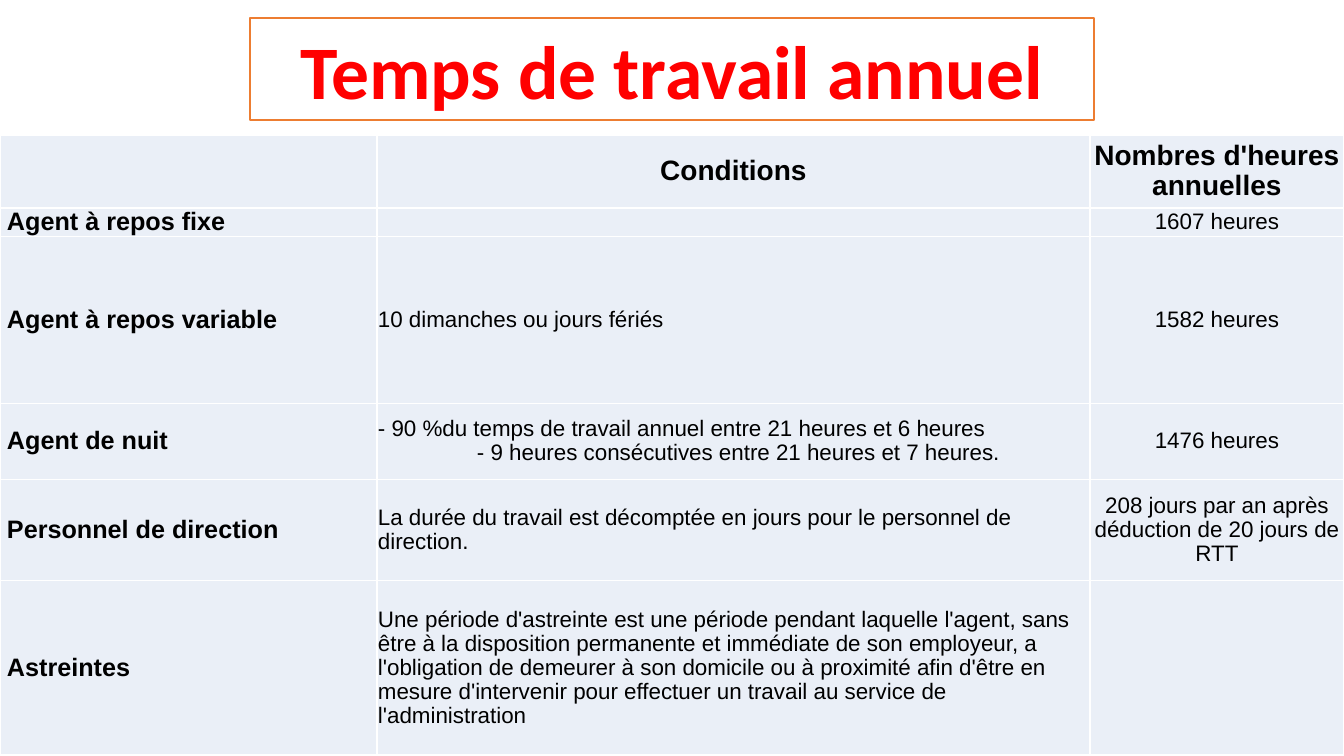
from lxml import etree
from pptx import Presentation
from pptx.dml.color import RGBColor
from pptx.enum.text import MSO_ANCHOR, PP_ALIGN
from pptx.oxml.ns import qn
from pptx.util import Emu, Pt

MIDDLE = MSO_ANCHOR.MIDDLE
LEFT, CENTER = PP_ALIGN.LEFT, PP_ALIGN.CENTER
SCALE = 914400 / 100.8
TITLE_ONLY = 5
COLUMN_WIDTHS = [377, 713, 254]
ROW_HEIGHTS = [73, 28, 167, 76, 101, 175]
SECOND_LINE_INDENT = 99
ROWS = [
    ["", "Conditions", "Nombres d'heures annuelles"],
    ["Agent à repos fixe", "", "1607 heures"],
    ["Agent à repos variable", "10 dimanches ou jours fériés", "1582 heures"],
    ["Agent de nuit",
     "- 90 %du temps de travail annuel entre 21 heures et 6 heures\n"
     "- 9 heures consécutives entre 21 heures et 7 heures.",
     "1476 heures"],
    ["Personnel de direction",
     "La durée du travail est décomptée en jours pour le personnel de direction.",
     "208 jours par an après déduction de 20 jours de RTT"],
    ["Astreintes",
     "Une période d'astreinte est une période pendant laquelle l'agent, sans être à la "
     "disposition permanente et immédiate de son employeur, a l'obligation de demeurer "
     "à son domicile ou à proximité afin d'être en mesure d'intervenir pour effectuer "
     "un travail au service de l'administration", ""],
]


def px(length):
    return Emu(round(length * SCALE))


def color(value):
    return RGBColor.from_string(value)


def set_font(font, name, size, bold, value):
    font.name = name
    font.size = Pt(size)
    font.bold = bold
    font.color.rgb = color(value)


def add_title(page, left, top, width, height):
    title = page.shapes.title
    title.left, title.top = px(left), px(top)
    title.width, title.height = px(width), px(height)
    title.fill.solid()
    title.fill.fore_color.rgb = color("FFFFFF")
    title.line.color.rgb = color("ED7D31")
    title.line.width = Pt(1)
    frame = title.text_frame
    frame.text = "Temps de travail annuel"
    frame.vertical_anchor = MIDDLE
    para = frame.paragraphs[0]
    para.alignment = CENTER
    set_font(para.runs[0].font, "Calibri", 54, True, "FF0000")


def add_borders(cell, value):
    properties = cell._tc.get_or_add_tcPr()
    for index, side in enumerate(["lnL", "lnR", "lnT", "lnB"]):
        border = etree.Element(qn("a:" + side), w=str(Pt(1)))
        fill = etree.SubElement(border, qn("a:solidFill"))
        etree.SubElement(fill, qn("a:srgbClr"), val=value)
        properties.insert(index, border)


def fill_cell(cell, text, row, column):
    cell.fill.solid()
    cell.fill.fore_color.rgb = color("EAEFF7")
    add_borders(cell, "FFFFFF")
    cell.vertical_anchor = MIDDLE
    cell.margin_left = px(7 if column == 0 else 1)
    cell.margin_right = cell.margin_top = px(1)
    cell.margin_bottom = px(0)
    cell.text_frame.text = text
    size = 20 if row == 0 else 18 if column == 0 else 16
    for index, para in enumerate(cell.text_frame.paragraphs):
        para.alignment = CENTER if row == 0 or column == 2 else LEFT
        para.line_spacing = 0.96
        if index:
            para._p.get_or_add_pPr().set("marL", str(px(SECOND_LINE_INDENT)))
        set_font(para.font, "Arial", size, row == 0 or column == 0, "000000")
        for span in para.runs:
            set_font(span.font, "Arial", size, row == 0 or column == 0, "000000")


def add_hours_table(page, left, top, width, height):
    frame = page.shapes.add_table(len(ROWS), len(COLUMN_WIDTHS),
                                  px(left), px(top), px(width), px(height))
    table = frame.table
    table.first_row = table.horz_banding = False
    for column, length in zip(table.columns, COLUMN_WIDTHS):
        column.width = px(length)
    for row, length in zip(table.rows, ROW_HEIGHTS):
        row.height = px(length)
    for row, texts in enumerate(ROWS):
        for column, text in enumerate(texts):
            fill_cell(table.cell(row, column), text, row, column)


def main():
    deck = Presentation()
    deck.slide_width, deck.slide_height = px(1344), px(756)
    page = deck.slides.add_slide(deck.slide_layouts[TITLE_ONLY])
    add_title(page, 250, 18, 844, 102)
    add_hours_table(page, 0, 135, sum(COLUMN_WIDTHS), sum(ROW_HEIGHTS))
    deck.save("out.pptx")


if __name__ == "__main__":
    main()
